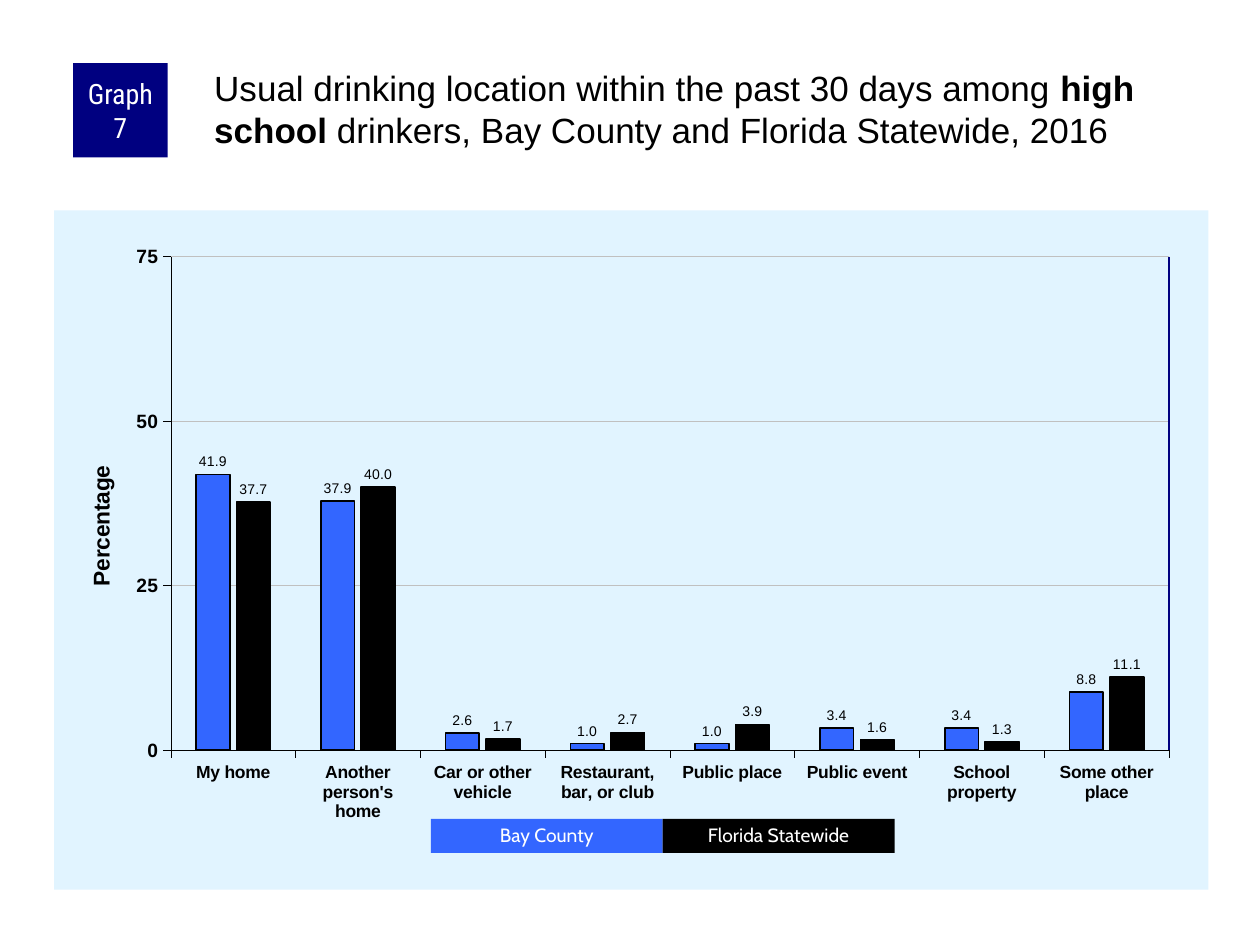
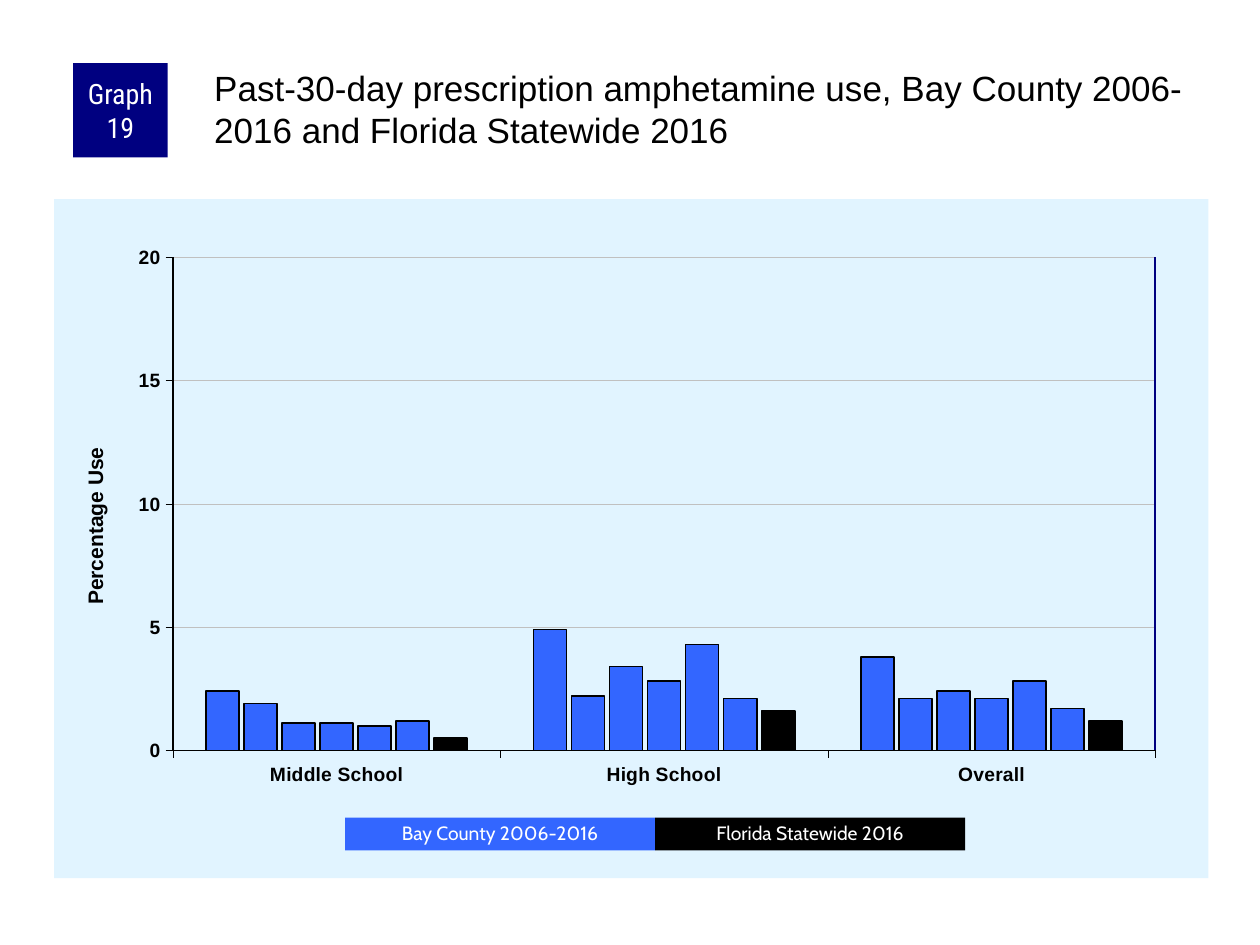
from lxml import etree
from pptx import Presentation
from pptx.chart.data import CategoryChartData
from pptx.dml.color import RGBColor
from pptx.enum.chart import XL_CHART_TYPE, XL_LABEL_POSITION, XL_TICK_MARK
from pptx.enum.shapes import MSO_CONNECTOR, MSO_SHAPE
from pptx.enum.text import MSO_ANCHOR, PP_ALIGN
from pptx.oxml import parse_xml
from pptx.oxml.ns import qn
from pptx.util import Inches, Pt

COLUMN = XL_CHART_TYPE.COLUMN_CLUSTERED
OUTSIDE = XL_LABEL_POSITION.OUTSIDE_END
TICK = XL_TICK_MARK.OUTSIDE
RECT = MSO_SHAPE.RECTANGLE
LINE = MSO_CONNECTOR.STRAIGHT
MIDDLE = MSO_ANCHOR.MIDDLE
CENTER = PP_ALIGN.CENTER

COLORS = {"navy": "000080", "blue": "3366FF", "black": "000000",
          "white": "FFFFFF", "pale": "E1F4FF", "gray": "C0C0C0"}
BADGE = (0.58, 0.5, 0.75, 0.75)
TITLE = (1.67, 0.5, 7.92, 0.83)
NS = ('xmlns:c="http://schemas.openxmlformats.org/drawingml/2006/chart" '
      'xmlns:a="http://schemas.openxmlformats.org/drawingml/2006/main"')


def rgb(name):
    return RGBColor.from_string(COLORS[name])


def style(font, color, **values):
    for name, value in values.items():
        setattr(font, name, value)
    font.color.rgb = rgb(color)


def stroke(line, color, width):
    line.color.rgb = rgb(color)
    line.width = Pt(width)


def set_frame(frame, insets=None, **values):
    frame.word_wrap = True
    for name, value in {**(insets or {}), **values}.items():
        setattr(frame, name, value)


def add_block(slide, box, fill, text, size, face, insets=None, spacing=1):
    block = slide.shapes.add_shape(RECT, *map(Inches, box))
    block.shadow.inherit = False
    block.fill.solid()
    block.fill.fore_color.rgb = rgb(fill)
    block.line.fill.background()
    set_frame(block.text_frame, insets, vertical_anchor=MIDDLE)
    para = block.text_frame.paragraphs[0]
    para.alignment = CENTER
    para.line_spacing = spacing
    run = para.add_run()
    run.text = text
    style(run.font, "white", size=Pt(size), name=face)


def add_header(slide, number, parts):
    side = {"margin_left": Inches(0.05), "margin_right": Inches(0.05),
            "margin_top": 0, "margin_bottom": 0}
    add_block(slide, BADGE, "navy", f"Graph {number}", 16,
              "Roboto Condensed", side)
    frame = slide.shapes.add_textbox(*map(Inches, TITLE)).text_frame
    set_frame(frame, margin_left=Inches(0.03), margin_top=Inches(0.03),
              margin_right=0, margin_bottom=0)
    para = frame.paragraphs[0]
    for text, bold in parts:
        run = para.add_run()
        run.text = text
        style(run.font, "black", size=Pt(20), name="Arial", bold=bold)


def set_layout(node, index, **places):
    for old in node.findall(qn("c:layout")):
        node.remove(old)
    target = '<c:layoutTarget val="inner"/>' if "w" in places else ""
    modes = "".join(f'<c:{key}Mode val="edge"/>' for key in "xy")
    sizes = "".join(f'<c:{key} val="{val}"/>' for key, val in places.items())
    node.insert(index, parse_xml(
        f"<c:layout {NS}><c:manualLayout>{target}{modes}{sizes}"
        "</c:manualLayout></c:layout>"))


def paint(fill=None, line=None):
    def solid(name):
        if not name:
            return "<a:noFill/>"
        return f'<a:solidFill><a:srgbClr val="{COLORS[name]}"/></a:solidFill>'
    return parse_xml(f"<c:spPr {NS}>{solid(fill)}"
                     f'<a:ln w="12700">{solid(line)}</a:ln></c:spPr>')


def style_axis(axis, size):
    axis.major_tick_mark = TICK
    stroke(axis.format.line, "black", 0.25)
    style(axis.tick_labels.font, "black", size=Pt(size), bold=True, name="Arial")


def style_scale(axis, scale):
    style_axis(axis, 11)
    axis.minimum_scale = 0
    axis.maximum_scale = scale["top"]
    axis.major_unit = scale["step"]
    axis.has_major_gridlines = True
    stroke(axis.major_gridlines.format.line, "gray", 0.25)
    title = axis.axis_title
    title.text_frame.text = scale["title"]
    run = title.text_frame.paragraphs[0].runs[0]
    style(run.font, "black", size=Pt(scale["size"]), bold=True, name="Arial")
    x, y = scale["place"]
    set_layout(title.text_frame._txBody.getparent().getparent(), 1, x=x, y=y)


def add_edge(slide, box, plot):
    left, top, width, height = box
    x = left + width * (plot["x"] + plot["w"])
    y = top + height * plot["y"]
    end = y + height * plot["h"]
    edge = slide.shapes.add_connector(LINE, *map(Inches, (x, y, x, end)))
    stroke(edge.line, "navy", 1)
    etree.SubElement(edge._element.spPr, qn("a:effectLst"))


def add_columns(slide, box, cats, rows, plot, scale, cat_size, gap, lap,
                labels=False, frame=None):
    data = CategoryChartData()
    data.categories = cats
    for index, row in enumerate(rows, 1):
        data.add_series(f"Series {index}", row)
    chart = slide.shapes.add_chart(COLUMN, *map(Inches, box), data).chart
    chart.has_legend = False
    chart.has_title = False
    style(chart.font, "black", size=Pt(8), name="Arial")
    style_axis(chart.category_axis, cat_size)
    style_scale(chart.value_axis, scale)
    bars = chart.plots[0]
    bars.gap_width, bars.overlap, bars.vary_by_categories = gap, lap, False
    for series in bars.series:
        last = series.name == f"Series {len(rows)}"
        series.invert_if_negative = False
        series.format.fill.solid()
        series.format.fill.fore_color.rgb = rgb("black" if last else "blue")
        stroke(series.format.line, "black", 1)
    if labels:
        bars.has_data_labels = True
        tags = bars.data_labels
        for name, value in {"show_value": True, "position": OUTSIDE,
                            "number_format": "0.0",
                            "number_format_is_linked": False}.items():
            setattr(tags, name, value)
        style(tags.font, "black", size=Pt(8), name="Arial")
    root = chart._chartSpace
    body = root.find(qn("c:chart"))
    body.addnext(paint("pale"))
    area = body.find(qn("c:plotArea"))
    set_layout(area, 0, **plot)
    area.append(paint(line=frame))
    add_edge(slide, box, plot)


def add_key(slide, box, names):
    left, top, width, height = box
    for index, (name, fill) in enumerate(zip(names, ("blue", "black"))):
        add_block(slide, (left + index * width, top, width, height),
                  fill, name, 11, "Cabin", spacing=0.9)


def add_graph(deck, number, title, columns, key, names):
    slide = deck.slides.add_slide(deck.slide_layouts[6])
    add_columns(slide, **columns)
    add_header(slide, number, title)
    add_key(slide, key, names)


def main():
    deck = Presentation()
    deck.slide_width, deck.slide_height = Inches(10), Inches(7.5)
    places = {
        "box": (0.43, 1.67, 9.16, 5.39),
        "cats": ["My home", "Another person's home", "Car or other vehicle",
                 "Restaurant, bar, or club", "Public place", "Public event",
                 "School property", "Some other place"],
        "rows": [(41.9, 37.9, 2.6, 1, 1, 3.4, 3.4, 8.8),
                 (37.7, 40, 1.7, 2.7, 3.9, 1.6, 1.3, 11.1)],
        "plot": {"x": 0.101, "y": 0.068, "w": 0.865, "h": 0.727},
        "scale": {"title": "Percentage", "size": 13, "top": 75, "step": 25,
                  "place": (0.025, 0.37)},
        "cat_size": 10, "gap": 150, "lap": -20, "labels": True}
    add_graph(deck, 7,
              [("Usual drinking location within the past 30 days among ", False),
               ("high school", True),
               (" drinkers, Bay County and Florida Statewide, 2016", False)],
              places, (3.42, 6.5, 1.84, 0.27),
              ("Bay County", "Florida Statewide"))
    usage = {
        "box": (0.43, 1.58, 9.16, 5.39),
        "cats": ["Middle School", "High School", "Overall"],
        "rows": [(2.4, 4.9, 3.8), (1.9, 2.2, 2.1), (1.1, 3.4, 2.4),
                 (1.1, 2.8, 2.1), (1, 4.3, 2.8), (1.2, 2.1, 1.7),
                 (0.5, 1.6, 1.2)],
        "plot": {"x": 0.103, "y": 0.086, "w": 0.851, "h": 0.726},
        "scale": {"title": "Percentage Use", "size": 12, "top": 20, "step": 5,
                  "place": (0.021, 0.36)},
        "cat_size": 11, "gap": 200, "lap": -15, "frame": "black"}
    add_graph(deck, 19,
              [("Past-30-day prescription amphetamine use, Bay County "
                "2006-2016 and Florida Statewide 2016", False)],
              usage, (2.74, 6.49, 2.46, 0.26),
              ("Bay County 2006-2016", "Florida Statewide 2016"))
    deck.save("out.pptx")


if __name__ == "__main__":
    main()
